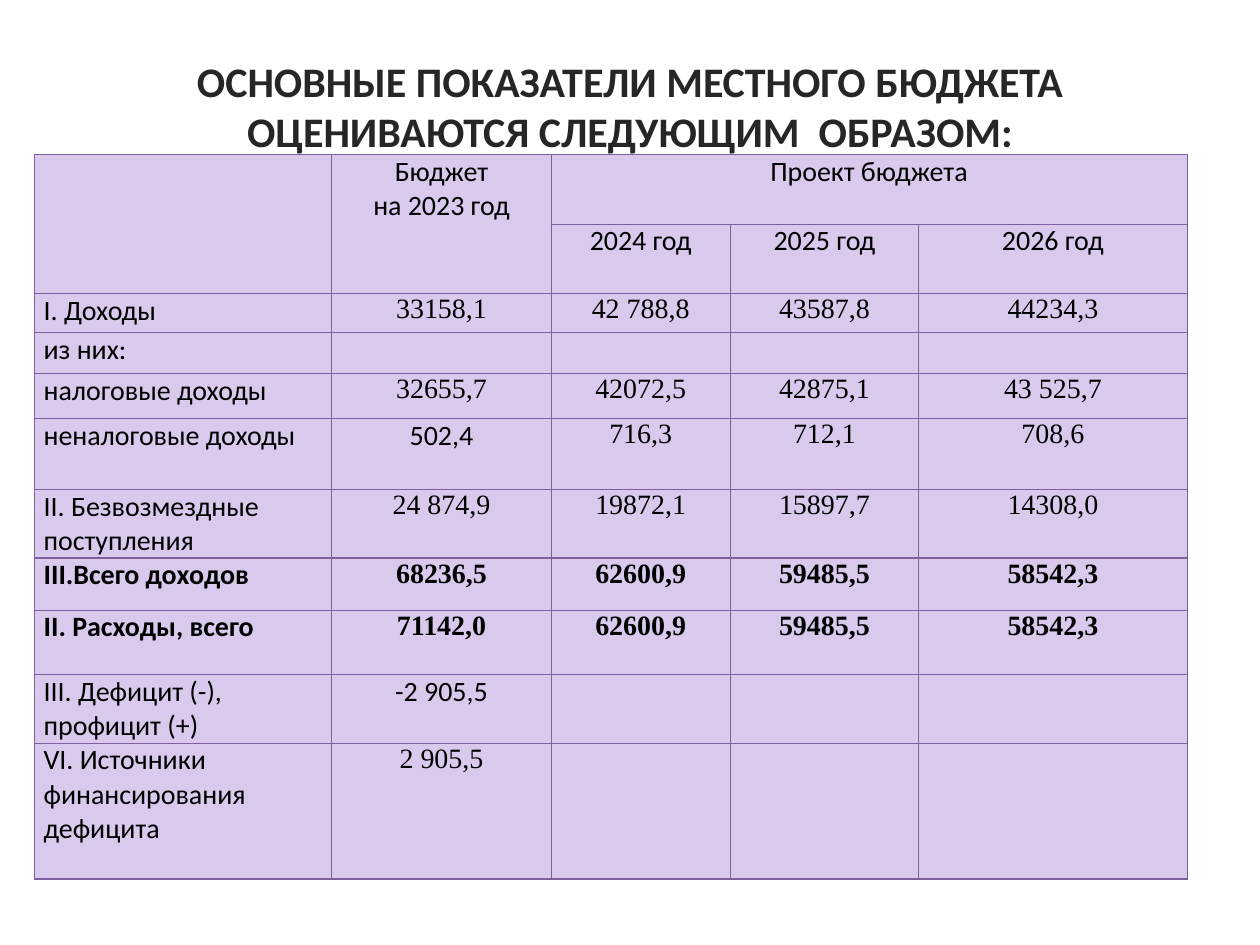
from lxml.etree import SubElement
from pptx import Presentation
from pptx.dml.color import RGBColor
from pptx.enum.text import MSO_ANCHOR as Anchor, PP_ALIGN as Align
from pptx.oxml.ns import qn
from pptx.util import Cm, Pt


def add_text(para, text, size, font, color, bold=False):
    span = para.add_run()
    span.text = text
    span.font.size = Pt(size)
    span.font.name = font
    span.font.bold = bold
    span.font.color.rgb = RGBColor.from_string(color)


def add_borders(cell, color, width):
    properties = cell._tc.get_or_add_tcPr()
    for side in ("lnL", "lnR", "lnT", "lnB"):
        line = SubElement(properties, qn("a:" + side), w=str(Pt(width)))
        fill = SubElement(line, qn("a:solidFill"))
        SubElement(fill, qn("a:srgbClr"), val=color)


deck = Presentation()
deck.slide_width, deck.slide_height = Cm(25.4), Cm(19.05)
page = deck.slides.add_slide(deck.slide_layouts[5])

title = page.shapes.title
title.left, title.top, title.width, title.height = Cm(1.27), Cm(0.33), Cm(22.86), Cm(3.6)
title.text_frame.word_wrap = True
title.text_frame.vertical_anchor = Anchor.MIDDLE
heading = title.text_frame.paragraphs[0]
heading.alignment = Align.CENTER
add_text(heading, "ОСНОВНЫЕ ПОКАЗАТЕЛИ МЕСТНОГО БЮДЖЕТА ОЦЕНИВАЮТСЯ СЛЕДУЮЩИМ  ОБРАЗОМ:",
         24, "Calibri", "262626", True)

budget_rows = [
    ["", "Бюджет\nна 2023 год", "Проект бюджета", "", ""],
    ["", "", "2024 год", "2025 год", "2026 год"],
    ["I. Доходы", "33158,1", "42 788,8", "43587,8", "44234,3"],
    ["из них:", "", "", "", ""],
    ["налоговые доходы", "32655,7", "42072,5", "42875,1", "43 525,7"],
    ["неналоговые доходы", "502,4", "716,3", "712,1", "708,6"],
    ["II. Безвозмездные поступления", "24 874,9", "19872,1", "15897,7", "14308,0"],
    ["III.Всего доходов", "68236,5", "62600,9", "59485,5", "58542,3"],
    ["II. Расходы, всего", "71142,0", "62600,9", "59485,5", "58542,3"],
    ["III. Дефицит (-), профицит (+)", "-2 905,5", "", "", ""],
    ["VI. Источники финансирования дефицита", "2 905,5", "", "", ""],
]
column_widths = [5.99, 4.42, 3.61, 3.8, 5.41]
row_heights = [1.4, 1.4, 0.79, 0.82, 0.91, 1.43, 1.3, 1.05, 1.3, 1.3, 2.74]
header_rows = (0, 1)
total_rows = (7, 8)
calibri_values = ("502,4", "-2 905,5")

frame = page.shapes.add_table(len(row_heights), len(column_widths), Cm(0.7), Cm(3.12),
                              Cm(sum(column_widths)), Cm(sum(row_heights)))
table = frame.table
for column, width in zip(table.columns, column_widths):
    column.width = Cm(width)
for row, height in zip(table.rows, row_heights):
    row.height = Cm(height)

for row_index, texts in enumerate(budget_rows):
    for column_index, text in enumerate(texts):
        cell = table.cell(row_index, column_index)
        add_borders(cell, "7D60A0", 0.75)
        cell.fill.solid()
        cell.fill.fore_color.rgb = RGBColor.from_string("D9CAED")
        cell.margin_left = cell.margin_right = Cm(0.18)
        cell.margin_top = cell.margin_bottom = Cm(0)
        if not text:
            continue
        is_label = column_index == 0 or row_index in header_rows or text in calibri_values
        for line_index, line_text in enumerate(text.split("\n")):
            body = cell.text_frame
            para = body.add_paragraph() if line_index else body.paragraphs[0]
            para.alignment = Align.CENTER if column_index else Align.LEFT
            add_text(para, line_text, 16, "Calibri" if is_label else "Times New Roman",
                     "000000", row_index in total_rows)

table.cell(2, 0).text_frame.paragraphs[0].alignment = Align.JUSTIFY
for first, last in [((0, 0), (1, 0)), ((0, 1), (1, 1)), ((0, 2), (0, 4))]:
    table.cell(*first).merge(table.cell(*last))

deck.save("out.pptx")
